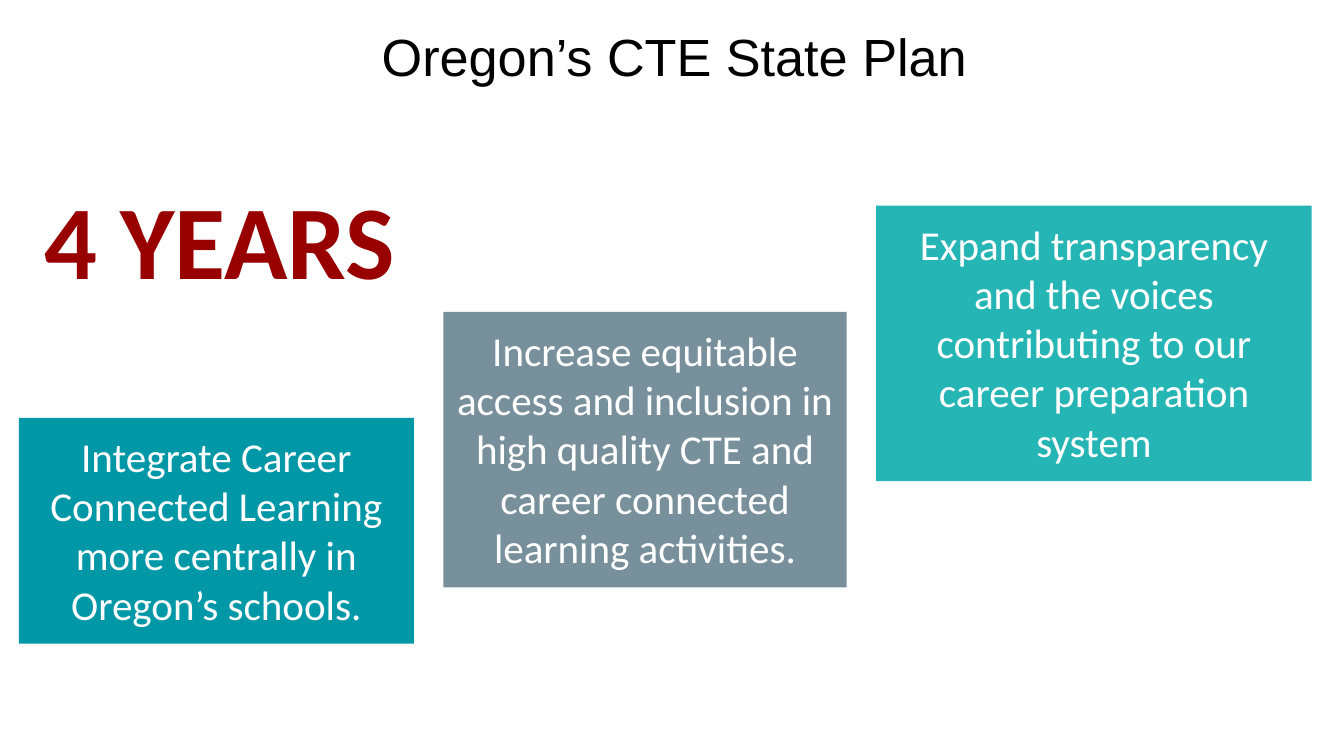
from pptx import Presentation
from pptx.dml.color import RGBColor
from pptx.enum.shapes import MSO_SHAPE
from pptx.enum.text import MSO_ANCHOR, MSO_AUTO_SIZE, PP_ALIGN
from pptx.util import Inches, Pt

COLORS = {
    "title": "000000",
    "term": "980000",
    "integrate": "0097A7",
    "increase": "78909C",
    "expand": "26B5B5",
    "goal_text": "FFFFFF",
}
TITLE = "Oregon’s CTE State Plan"
TERM = "4 YEARS"
GOALS = [
    ("integrate", 2.94, 4, "Integrate Career Connected Learning more centrally in Oregon’s schools."),
    ("increase", 3.0, 5, "Increase equitable access and inclusion in high quality CTE and career connected learning activities."),
    ("expand", 3.24, 5, "Expand transparency and the voices contributing to our career preparation system"),
]

SLIDE_WIDTH = 10
SLIDE_HEIGHT = SLIDE_WIDTH * 9 / 16
FIRST_LEFT, FIRST_TOP = 0.14, 3.11
GAP, STEP_UP = 0.22, 0.79
LINE_HEIGHT, INSET = 0.37, 0.1


def color(key):
    return RGBColor.from_string(COLORS[key])


def write(part, text, size, font, color_key, align, anchor, inset_y=INSET, bold=False):
    frame = part.text_frame
    frame.text = text
    frame.word_wrap = True
    frame.auto_size = MSO_AUTO_SIZE.NONE
    frame.vertical_anchor = anchor
    frame.margin_left = frame.margin_right = Inches(INSET)
    frame.margin_top = frame.margin_bottom = Inches(inset_y)
    paragraph = frame.paragraphs[0]
    paragraph.alignment = align
    run_font = paragraph.runs[0].font
    run_font.name, run_font.size, run_font.bold = font, Pt(size), bold
    run_font.color.rgb = color(color_key)


def add_title(slide):
    title = slide.shapes.title
    title.left, title.top = Inches(2.74), Inches(-0.1)
    title.width, title.height = Inches(SLIDE_WIDTH - 2.74), Inches(1.09)
    write(title, TITLE, 28, "Arial", "title", PP_ALIGN.LEFT, MSO_ANCHOR.MIDDLE, INSET / 2)
    title.text_frame.paragraphs[0].line_spacing = 0.9


def add_term(slide):
    term = slide.shapes.add_textbox(Inches(0.23), Inches(1.2), Inches(4.21), Inches(1.14))
    write(term, TERM, 56, "Calibri", "term", PP_ALIGN.LEFT, MSO_ANCHOR.TOP, bold=True)


def add_goals(slide):
    left = FIRST_LEFT
    for step, (key, width, lines, text) in enumerate(GOALS):
        goal = slide.shapes.add_shape(
            MSO_SHAPE.RECTANGLE,
            Inches(left),
            Inches(FIRST_TOP - step * STEP_UP),
            Inches(width),
            Inches(lines * LINE_HEIGHT + 2 * INSET),
        )
        goal.shadow.inherit = False
        goal.fill.solid()
        goal.fill.fore_color.rgb = color(key)
        goal.line.fill.background()
        write(goal, text, 22, "Calibri", "goal_text", PP_ALIGN.CENTER, MSO_ANCHOR.TOP)
        left += width + GAP


def main():
    deck = Presentation()
    deck.slide_width, deck.slide_height = Inches(SLIDE_WIDTH), Inches(SLIDE_HEIGHT)
    slide = deck.slides.add_slide(deck.slide_layouts.get_by_name("Title Only"))
    add_title(slide)
    add_term(slide)
    add_goals(slide)
    deck.save("out.pptx")


if __name__ == "__main__":
    main()
